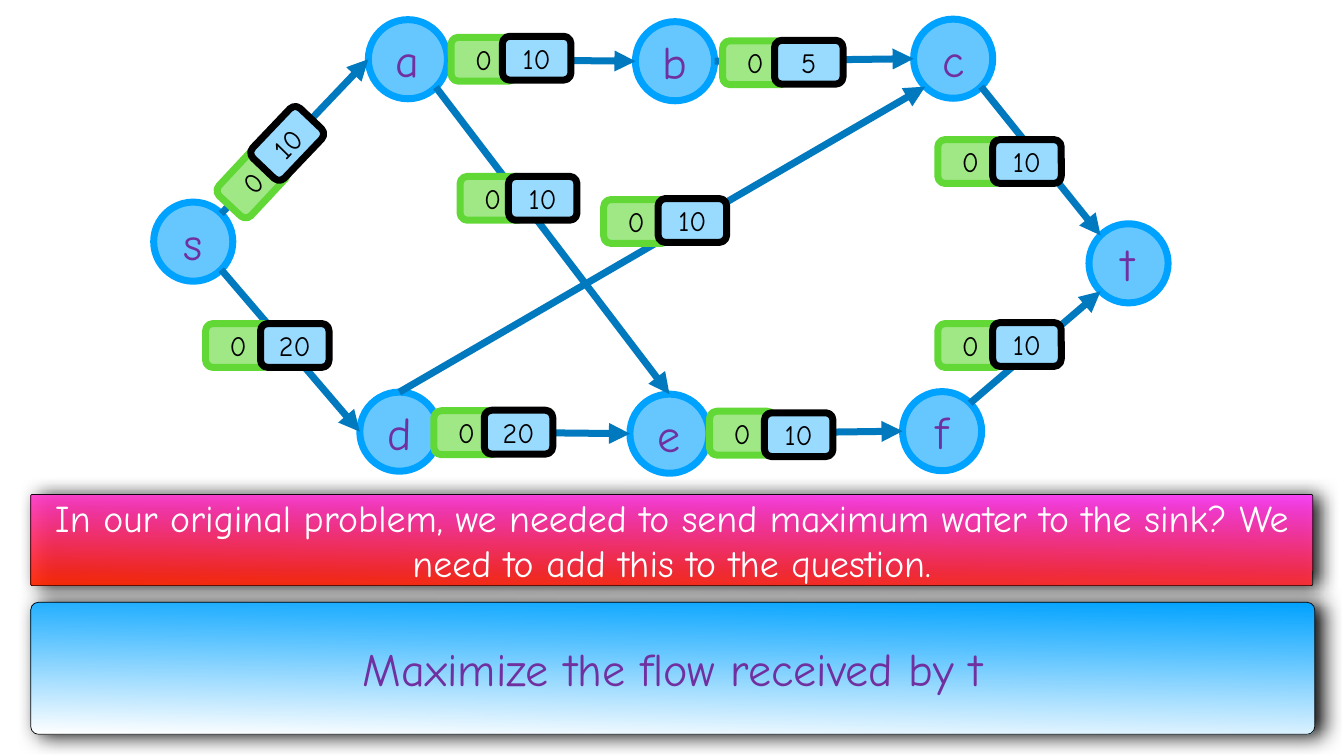
"""Builds a slide showing a flow network, its zero flows and the maximisation goal."""
from math import cos, radians, sin

from pptx import Presentation
from pptx.dml.color import RGBColor as RGB
from pptx.enum.shapes import MSO_CONNECTOR as LINK, MSO_SHAPE as SHAPE
from pptx.enum.text import MSO_ANCHOR as ANCHOR, PP_ALIGN as ALIGN
from pptx.oxml import parse_xml
from pptx.oxml.ns import nsdecls
from pptx.util import Inches, Pt

THEME = {
    "font": "Comic Neue", "node_size": 66, "tag_size": 40, "thick": 10,
    "node": "66C7FF", "node_line": "00A2FF", "letter": "7030A0", "edge": "0079BF",
    "flow": "A0E886", "flow_line": "61D836", "capacity": "99DAFF", "ink": "000000",
}
DIAMETER, TAG_HEIGHT, FLOW_WIDTH, CAPACITY_WIDTH = 1.57, 0.87, 1.29, 1.36

NODES = {
    "s": (3.05, 4.01), "a": (7.31, 0.39), "c": (18.13, 0.38), "d": (7.14, 7.78),
    "e": (12.5, 7.82), "b": (12.61, 0.43), "t": (21.61, 4.44), "f": (17.91, 7.77),
}
BEARINGS = {"E": 0, "SE": 45, "S": 90, "SW": 135, "W": 180, "NW": 225, "N": 270, "NE": 315}

# source, leaving side, target, entering side, capacity, flow corner, capacity corner, rotations
EDGES = [
    ("s", "NE", "a", "W", 10, (4.36, 3.18), (5.02, 2.41), (313, 313.6)),
    ("a", "E", "b", "W", 10, (8.95, 0.74), (9.97, 0.72), (0, 0)),
    ("b", "E", "c", "W", 5, (14.34, 0.81), (15.37, 0.8), (0, 0)),
    ("c", "SE", "t", "NW", 10, (18.61, 2.77), (19.7, 2.77), (0, 0)),
    ("a", "SE", "e", "N", 10, (9.13, 3.5), (10.09, 3.5), (0, 0)),
    ("d", "N", "c", "SW", 10, (11.98, 3.96), (13.06, 3.94), (0, 0)),
    ("s", "SE", "d", "W", 20, (4.08, 6.42), (5.17, 6.42), (0, 0)),
    ("d", "E", "e", "W", 20, (8.61, 8.15), (9.61, 8.14), (0, 0)),
    ("e", "E", "f", "W", 10, (14.08, 8.16), (15.17, 8.19), (0, 0)),
    ("f", "NE", "t", "SW", 10, (18.61, 6.42), (19.7, 6.4), (0, 0)),
]
BANNERS = [
    {"text": "In our original problem, we needed to send maximum water to the sink? "
             "We need to add this to the question.",
     "box": (0.61, 9.81, 25.44, 1.81), "corner": 0.017, "size": 54, "color": "FFFFFF",
     "stops": ("FF40FF", "FF2600"), "opacity": 93},
    {"text": "Maximize the flow received by t",
     "box": (0.61, 11.95, 25.48, 2.62), "corner": 0.059, "size": 66, "color": "7030A0",
     "stops": ("00A2FF", "FFFFFF"), "opacity": 100},
]


def rgb(name):
    return RGB.from_string(THEME.get(name, name))


def add_block(slide, kind, box, text, size, color, line, width, fill=None):
    block = slide.shapes.add_shape(kind, *map(Inches, box))
    block.shadow.inherit = False
    if fill:
        block.fill.solid()
        block.fill.fore_color.rgb = rgb(fill)
    block.line.color.rgb = rgb(line)
    block.line.width = Pt(width)
    frame = block.text_frame
    frame.word_wrap = True
    frame.vertical_anchor = ANCHOR.MIDDLE
    frame.margin_left = frame.margin_right = Inches(0.06)
    frame.margin_top = frame.margin_bottom = Inches(0.06)
    frame.text = text
    paragraph = frame.paragraphs[0]
    paragraph.alignment = ALIGN.CENTER
    font = paragraph.runs[0].font
    font.name, font.size, font.color.rgb = THEME["font"], Pt(size), rgb(color)
    return block


def rim_point(node, side):
    radius, angle = DIAMETER / 2, radians(BEARINGS[side])
    left, top = NODES[node]
    return (Inches(left + radius + radius * cos(angle)),
            Inches(top + radius + radius * sin(angle)))


def add_edge(slide, start, end):
    edge = slide.shapes.add_connector(LINK.STRAIGHT, *start, *end)
    edge.line.color.rgb = rgb("edge")
    edge.line.width = Pt(THEME["thick"])
    edge.line._get_or_add_ln().append(
        parse_xml(f'<a:tailEnd {nsdecls("a")} type="triangle"/>'))
    edge._element.spPr.append(parse_xml(f'<a:effectLst {nsdecls("a")}/>'))


def add_tag(slide, text, corner, width, rotation, fill, line):
    tag = add_block(slide, SHAPE.ROUNDED_RECTANGLE, (*corner, width, TAG_HEIGHT), text,
                    THEME["tag_size"], "ink", line, THEME["thick"], fill)
    tag.rotation = rotation


def add_banner(slide, banner):
    block = add_block(slide, SHAPE.ROUNDED_RECTANGLE, banner["box"], banner["text"],
                      banner["size"], banner["color"], "ink", 1)
    block.adjustments[0] = banner["corner"]
    block.fill.gradient()
    block.fill.gradient_angle = 269
    for stop, color, position in zip(block.fill.gradient_stops, banner["stops"], (0, 1)):
        stop.color.rgb, stop.position = rgb(color), position
    properties = block._element.spPr
    if banner["opacity"] < 100:
        for color in properties.xpath(".//a:srgbClr"):
            color.append(parse_xml(
                f'<a:alpha {nsdecls("a")} val="{banner["opacity"] * 1000}"/>'))
    properties.xpath("./a:effectLst")[0].append(parse_xml(
        f'<a:outerShdw {nsdecls("a")} blurRad="{Pt(28)}" dist="{Pt(9)}" dir="0" '
        f'rotWithShape="0"><a:srgbClr val="{THEME["ink"]}"><a:alpha val="97000"/>'
        '</a:srgbClr></a:outerShdw>'))


def main():
    deck = Presentation()
    deck.slide_width, deck.slide_height = Inches(26.67), Inches(15)
    slide = deck.slides.add_slide(deck.slide_layouts[6])
    for letter, corner in NODES.items():
        add_block(slide, SHAPE.OVAL, (*corner, DIAMETER, DIAMETER), letter,
                  THEME["node_size"], "letter", "node_line", THEME["thick"], "node")
    for source, leaving, target, entering, *_ in EDGES:
        add_edge(slide, rim_point(source, leaving), rim_point(target, entering))
    for *_, capacity, flow_at, capacity_at, (flow_turn, capacity_turn) in EDGES:
        add_tag(slide, "0", flow_at, FLOW_WIDTH, flow_turn, "flow", "flow_line")
        add_tag(slide, str(capacity), capacity_at, CAPACITY_WIDTH, capacity_turn,
                "capacity", "ink")
    for banner in BANNERS:
        add_banner(slide, banner)
    deck.save("out.pptx")


if __name__ == "__main__":
    main()
